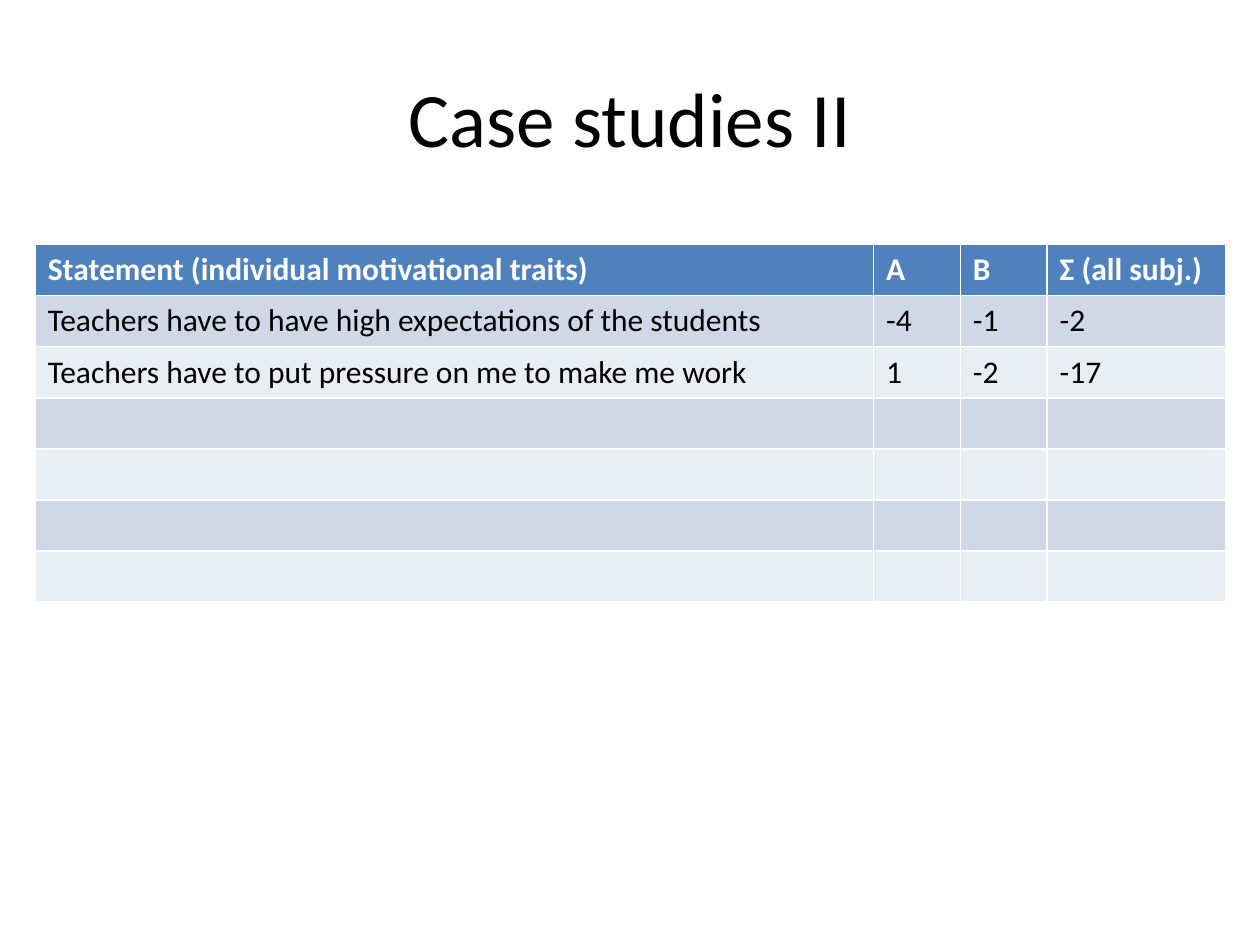
import dataclasses

import pptx
import pptx.dml.color
import pptx.enum.text
import pptx.util

Cm = pptx.util.Cm
FONT = "Calibri"


@dataclasses.dataclass(frozen=True)
class RowStyle:
    fill: str
    text: str
    bold: bool


HEADER = RowStyle("4F81BD", "FFFFFF", True)
BANDS = (RowStyle("D0D8E8", "000000", False), RowStyle("E9EDF4", "000000", False))

COLUMN_WIDTHS = (16.9, 1.75, 1.75, 3.6)
ROW_HEIGHT = 1.03
ROW_COUNT = 7
STATEMENTS = (
    ("Statement (individual motivational traits)", "A", "B", "Ʃ (all subj.)"),
    ("Teachers have to have high expectations of the students", "-4", "-1", "-2"),
    ("Teachers have to put pressure on me to make me work", "1", "-2", "-17"),
)


def color(value: str) -> pptx.dml.color.RGBColor:
    return pptx.dml.color.RGBColor.from_string(value)


def format_font(para, size: float, text_color: str, bold: bool = False) -> None:
    para.font.name = FONT
    para.font.size = pptx.util.Pt(size)
    para.font.bold = bold
    para.font.color.rgb = color(text_color)


def add_title(page, text: str) -> None:
    box = page.shapes.title
    box.left, box.top, box.width, box.height = Cm(1.27), Cm(0.76), Cm(22.86), Cm(3.18)
    box.text_frame.text = text
    box.text_frame.vertical_anchor = pptx.enum.text.MSO_ANCHOR.MIDDLE
    para = box.text_frame.paragraphs[0]
    para.alignment = pptx.enum.text.PP_ALIGN.CENTER
    format_font(para, 44, "000000")


def fill_cell(cell, text: str, style: RowStyle) -> None:
    cell.fill.solid()
    cell.fill.fore_color.rgb = color(style.fill)
    cell.text = text
    format_font(cell.text_frame.paragraphs[0], 18, style.text, style.bold)


def add_statement_table(page) -> None:
    table = page.shapes.add_table(
        ROW_COUNT, len(COLUMN_WIDTHS), Cm(0.71), Cm(4.93),
        Cm(sum(COLUMN_WIDTHS)), Cm(ROW_COUNT * ROW_HEIGHT),
    ).table
    for column, width in zip(table.columns, COLUMN_WIDTHS):
        column.width = Cm(width)

    # Rows after the statements stay empty but keep the banding
    for index, row in enumerate(table.rows):
        row.height = Cm(ROW_HEIGHT)
        style = BANDS[(index - 1) % 2] if index else HEADER
        texts = STATEMENTS[index] if index < len(STATEMENTS) else [""] * len(COLUMN_WIDTHS)
        for cell, text in zip(row.cells, texts):
            fill_cell(cell, text, style)


def main() -> None:
    deck = pptx.Presentation()
    deck.slide_width, deck.slide_height = Cm(25.4), Cm(19.05)
    page = deck.slides.add_slide(deck.slide_layouts.get_by_name("Title Only"))
    add_title(page, "Case studies II")
    add_statement_table(page)
    deck.save("out.pptx")


if __name__ == "__main__":
    main()
